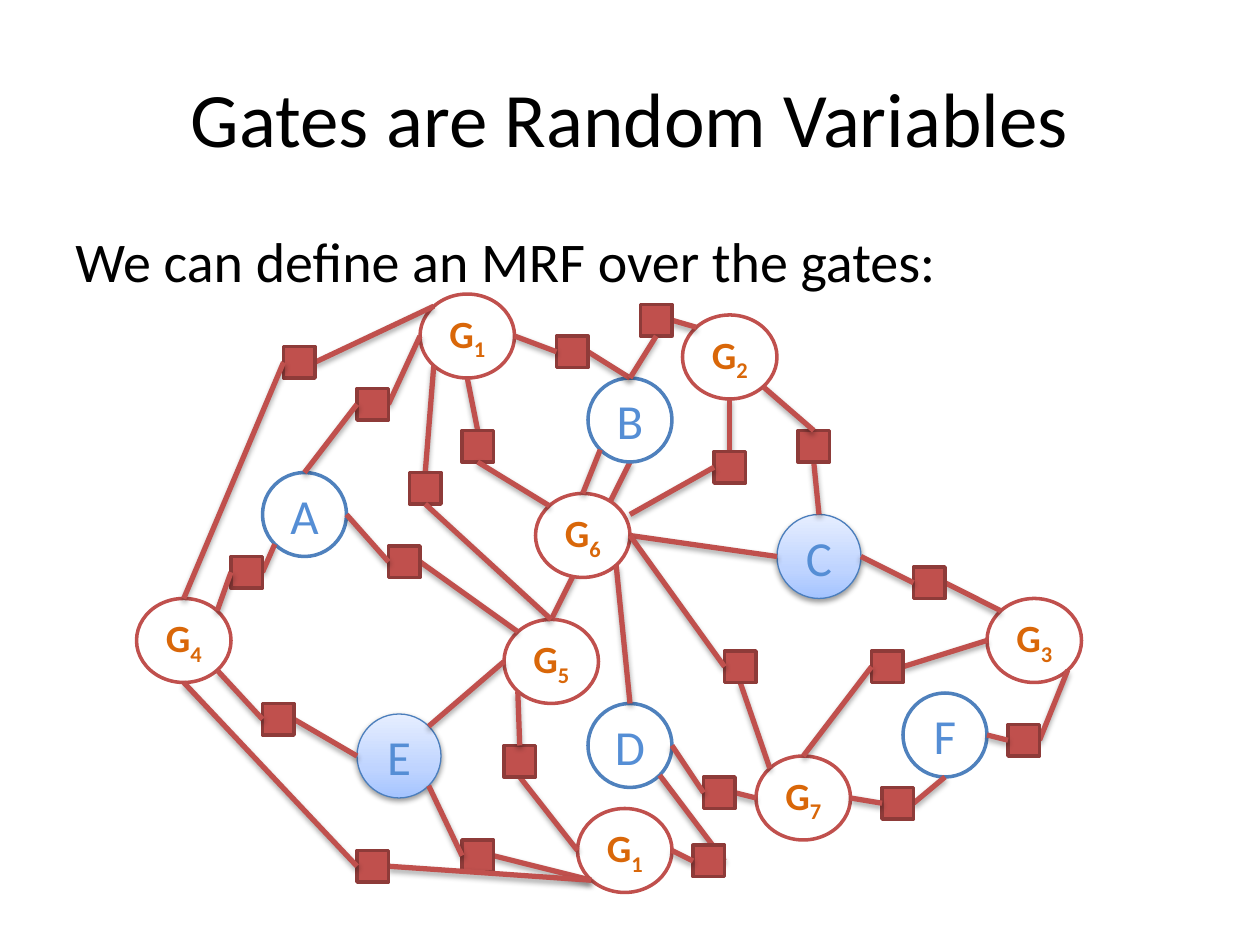
"""Build the slide with a Markov random field drawn over gate variables."""
from copy import deepcopy

from pptx import Presentation
from pptx.dml.color import RGBColor
from pptx.enum.shapes import MSO_CONNECTOR, MSO_SHAPE
from pptx.enum.text import MSO_ANCHOR, PP_ALIGN
from pptx.oxml import parse_xml
from pptx.oxml.ns import nsdecls
from pptx.util import Inches, Pt

COLORS = {
    "text": "000000", "paper": "FFFFFF", "edge": "C0504D", "factor_line": "8E3B39",
    "var_line": "4F81BD", "var_text": "558ED5", "seen_line": "4B7EBC", "gate_text": "D96709",
}
SEEN_STOPS = [(0, "A4C4FF"), (0.35, "BFD4FF"), (1, "E6EEFF")]
CELL = 1 / 12
NODE_H, VAR_W, GATE_W, FACTOR = 8, 8, 9, 3

VARIABLES = {"A": (25, 45), "C": (74, 49), "E": (34, 68), "D": (56, 67), "B": (56, 36), "F": (86, 66)}
OBSERVED = {"C", "E"}
GATES = {
    "G7": (72, 72), "G2": (65, 30), "G3": (94, 57), "G4": (13, 57),
    "G5": (48, 59), "G6": (51, 47), "G1": (40, 28), "G1 low": (55, 77),
}
NEAR, FAR = 0.146, 0.854
SITES = {
    "t": (0.5, 0), "b": (0.5, 1), "l": (0, 0.5), "r": (1, 0.5),
    "tl": (NEAR, NEAR), "tr": (FAR, NEAR), "bl": (NEAR, FAR), "br": (FAR, FAR),
    "upper r": (1, 0.25),
}
BACK_LINK = ("G5", "t", "B", "b")
LINKS = [("G6", "br", "D", "t"), ("G6", "t", "B", "bl"), ("G6", "r", "C", "l"), ("E", "tr", "G5", "l")]
FACTORS = [
    ((34, 37), ("r", "G1", "l"), ("l", "A", "t")),
    ((53, 32), ("r", "B", "t"), ("l", "G1", "r")),
    ((22, 53), ("r", "A", "bl"), ("l", "G4", "tr")),
    ((25, 67), ("r", "E", "l"), ("l", "G4", "br")),
    ((76, 41), ("b", "C", "t"), ("t", "G2", "br")),
    ((61, 29), ("r", "G2", "tl"), ("b", "B", "t")),
    ((87, 54), ("r", "G3", "tl"), ("l", "C", "r")),
    ((84, 75), ("r", "F", "b"), ("l", "G7", "r")),
    ((96, 69), ("r", "G3", "br"), ("l", "F", "r")),
    ((44, 80), ("r", "G1 low", "bl"), ("l", "E", "br")),
    ((66, 80.5), ("r", "D", "br"), ("l", "G1 low", "r")),
    ((67, 74), ("r", "G7", "l"), ("l", "D", "r")),
    ((44, 41), ("t", "G1", "b"), ("b", "G6", "tl")),
    ((69, 62), ("b", "G7", "tl"), ("l", "G6", "r")),
    ((83, 62), ("r", "G3", "l"), ("l", "G7", "t")),
    ((68, 43), ("t", "G2", "b"), ("l", "G6", "upper r")),
    ((48, 71), ("b", "G1 low", "l"), ("t", "G5", "bl")),
    ((39, 45), ("t", "G1", "bl"), ("b", "G5", "t")),
    ((37, 52), ("r", "G5", "tl"), ("l", "A", "r")),
    ((27, 33), ("r", "G1", "tl"), ("l", "G4", "t")),
    ((34, 81), ("r", "G1 low", "bl"), ("l", "G4", "b")),
]


def rgb(name):
    return RGBColor.from_string(COLORS[name])


def grid(n):
    return Inches(n * CELL)


def site(box, name):
    col, row, w, h = box
    fx, fy = SITES[name]
    return grid(col + fx * w), grid(row + fy * h)


def node_box(name):
    if name in VARIABLES:
        return (*VARIABLES[name], VAR_W, NODE_H)
    return (*GATES[name], GATE_W, NODE_H)


def add_shadow(sp, alpha, dist):
    sp._element.spPr.append(parse_xml(
        f'<a:effectLst {nsdecls("a")}><a:outerShdw blurRad="40000" dist="{dist}" dir="5400000" '
        f'rotWithShape="0"><a:srgbClr val="000000"><a:alpha val="{alpha}000"/></a:srgbClr>'
        '</a:outerShdw></a:effectLst>'))


def add_edge(slide, start, end):
    line = slide.shapes.add_connector(MSO_CONNECTOR.STRAIGHT, *start, *end)
    line.line.color.rgb = rgb("edge")
    line.line.width = Pt(3)
    add_shadow(line, 35, 23000)


def add_link(slide, a, a_site, b, b_site):
    add_edge(slide, site(node_box(a), a_site), site(node_box(b), b_site))


def add_box(slide, kind, box, fill, line, width=2):
    sp = slide.shapes.add_shape(kind, *map(grid, box))
    sp.fill.solid()
    sp.fill.fore_color.rgb = rgb(fill)
    sp.line.color.rgb = rgb(line)
    sp.line.width = Pt(width)
    return sp


def style_run(r, size, color, bold=False):
    r.font.name = "Calibri"
    r.font.size = Pt(size)
    r.font.bold = bold
    r.font.color.rgb = rgb(color)


def add_label(sp, parts, size, color, bold=False):
    tf = sp.text_frame
    tf.vertical_anchor = MSO_ANCHOR.MIDDLE
    p = tf.paragraphs[0]
    p.alignment = PP_ALIGN.CENTER
    for i, part in enumerate(parts):
        r = p.add_run()
        r.text = part
        style_run(r, size, color, bold)
        if i:
            r.font._element.set("baseline", "-25000")


def fill_observed(sp):
    sp.fill.gradient()
    sp.fill.gradient_angle = 90
    stops = sp._element.spPr.xpath("a:gradFill/a:gsLst")[0]
    stops.insert(1, deepcopy(stops[0]))
    for stop, (pos, color) in zip(sp.fill.gradient_stops, SEEN_STOPS):
        stop.position = pos
        stop.color.rgb = RGBColor.from_string(color)
    add_shadow(sp, 38, 20000)


def add_variable(slide, name):
    seen = name in OBSERVED
    line, width = ("seen_line", 0.75) if seen else ("var_line", 2)
    sp = add_box(slide, MSO_SHAPE.OVAL, node_box(name), "paper", line, width)
    if seen:
        fill_observed(sp)
    else:
        sp.shadow.inherit = False
    add_label(sp, [name], 28, "var_text")


def add_gate(slide, name):
    sp = add_box(slide, MSO_SHAPE.OVAL, node_box(name), "paper", "edge")
    sp.shadow.inherit = False
    add_label(sp, name[:2], 22, "gate_text", True)


def add_factor(slide, pos, first, second):
    box = (*pos, FACTOR, FACTOR)
    ends = [(site(box, own), site(node_box(node), other)) for own, node, other in (first, second)]
    add_edge(slide, *ends[0])
    sp = add_box(slide, MSO_SHAPE.RECTANGLE, box, "edge", "factor_line")
    sp.shadow.inherit = False
    add_edge(slide, *ends[1])


def add_heading(slide, text):
    title = slide.shapes.title
    title.left, title.top, title.width, title.height = map(Inches, (0.5, 0.3, 9, 1.25))
    title.text_frame.text = text
    title.text_frame.vertical_anchor = MSO_ANCHOR.MIDDLE
    p = title.text_frame.paragraphs[0]
    p.alignment = PP_ALIGN.CENTER
    style_run(p.runs[0], 44, "text")


def add_body(slide, text):
    tf = slide.shapes.add_textbox(*map(Inches, (0.5, 1.75, 9, 4.95))).text_frame
    tf.word_wrap = True
    tf.text = text
    style_run(tf.paragraphs[0].runs[0], 32, "text")


def main():
    prs = Presentation()
    prs.slide_width, prs.slide_height = Inches(10), Inches(7.5)
    slide = prs.slides.add_slide(prs.slide_layouts[5])
    add_heading(slide, "Gates are Random Variables")
    add_body(slide, "We can define an MRF over the gates:")
    add_link(slide, *BACK_LINK)
    for name in VARIABLES:
        add_variable(slide, name)
    for name in GATES:
        add_gate(slide, name)
    for link in LINKS:
        add_link(slide, *link)
    for factor in FACTORS:
        add_factor(slide, *factor)
    prs.save("out.pptx")


if __name__ == "__main__":
    main()
